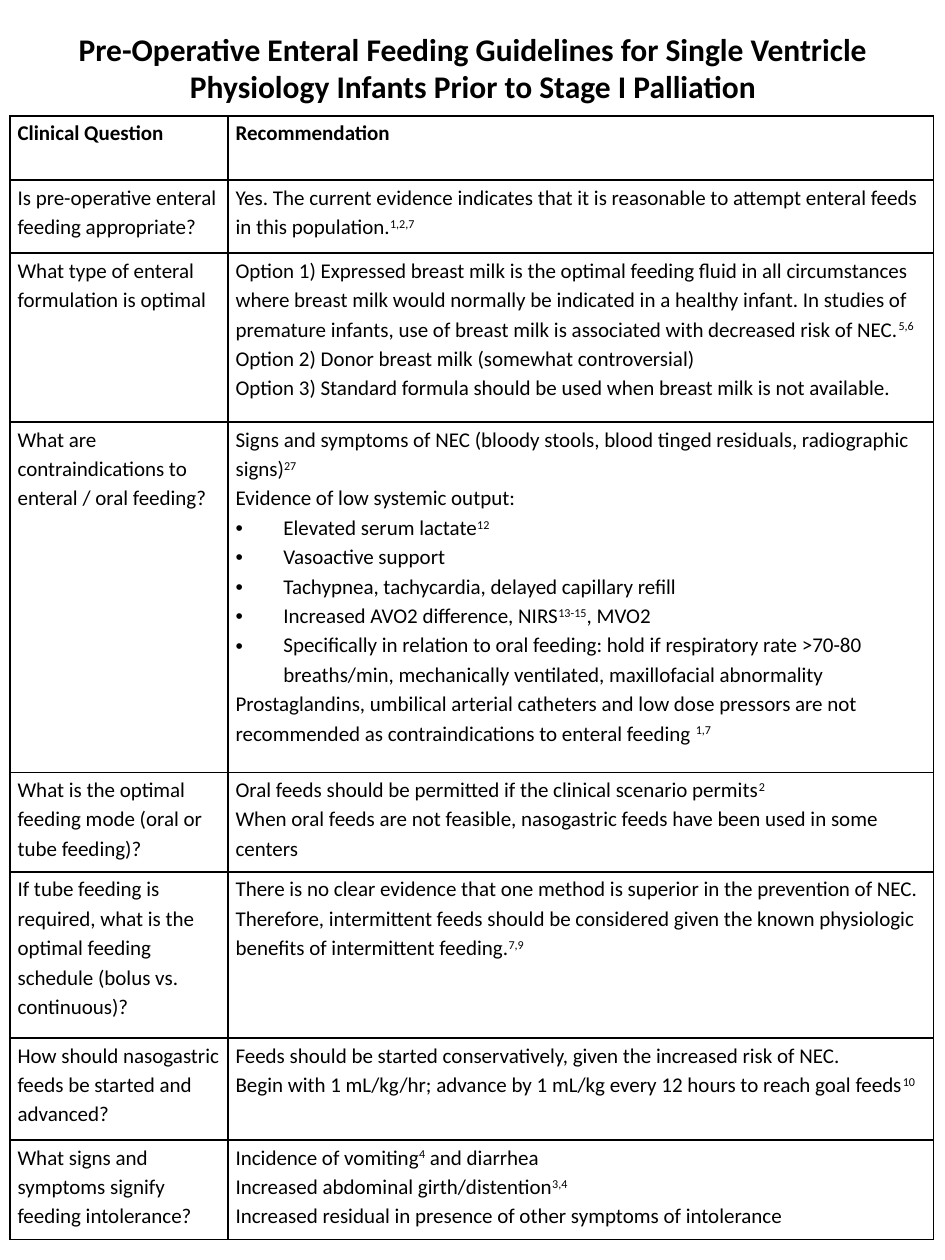
from dataclasses import dataclass

from lxml.etree import SubElement
from pptx import Presentation
from pptx.dml.color import RGBColor
from pptx.enum.text import MSO_ANCHOR, MSO_AUTO_SIZE, PP_ALIGN
from pptx.oxml.ns import qn
from pptx.util import Inches, Pt


@dataclass(frozen=True)
class Theme:
    font: str = "Calibri"
    ink: str = "000000"
    head: int = 18
    body: int = 12
    rule: int = 1


THEME = Theme()
TITLE = ("Pre-Operative Enteral Feeding Guidelines for Single Ventricle "
         "Physiology Infants Prior to Stage I Palliation")
COLS = [1.73, 5.6]

# Row height, question, answer lines; ^marks^ are superscript, "• " starts a bullet
ROWS = [
    (0.51, "Clinical Question", ["Recommendation"]),
    (0.58, "Is pre-operative enteral feeding appropriate?", [
        "Yes. The current evidence indicates that it is reasonable to attempt "
        "enteral feeds in this population.^1,2,7^"]),
    (1.34, "What type of enteral formulation is optimal", [
        "Option 1) Expressed breast milk is the optimal feeding fluid in all "
        "circumstances where breast milk would normally be indicated in a "
        "healthy infant. In studies of premature infants, use of breast milk "
        "is associated with decreased risk of NEC.^5,6^",
        "Option 2) Donor breast milk (somewhat controversial)",
        "Option 3) Standard formula should be used when breast milk is not "
        "available."]),
    (2.78, "What are contraindications to enteral / oral feeding?", [
        "Signs and symptoms of NEC (bloody stools, blood tinged residuals, "
        "radiographic signs)^27^",
        "Evidence of low systemic output:",
        "• Elevated serum lactate^12^",
        "• Vasoactive support",
        "• Tachypnea, tachycardia, delayed capillary refill",
        "• Increased AVO2 difference, NIRS^13-15^, MVO2",
        "• Specifically in relation to oral feeding: hold if respiratory rate "
        ">70-80 breaths/min, mechanically ventilated, maxillofacial abnormality",
        "Prostaglandins, umbilical arterial catheters and low dose pressors "
        "are not recommended as contraindications to enteral feeding ^1,7^"]),
    (0.79, "What is the optimal feeding mode (oral or tube feeding)?", [
        "Oral feeds should be permitted if the clinical scenario permits^2^",
        "When oral feeds are not feasible, nasogastric feeds have been used "
        "in some centers"]),
    (1.32, "If tube feeding is required, what is the optimal feeding schedule "
           "(bolus vs. continuous)?", [
        "There is no clear evidence that one method is superior in the "
        "prevention of NEC. Therefore, intermittent feeds should be considered "
        "given the known physiologic benefits of intermittent feeding.^7,9^"]),
    (0.81, "How should nasogastric feeds be started and advanced?", [
        "Feeds should be started conservatively, given the increased risk of NEC.",
        "Begin with 1 mL/kg/hr; advance by 1 mL/kg every 12 hours to reach "
        "goal feeds^10^"]),
    (0.79, "What signs and symptoms signify feeding intolerance?", [
        "Incidence of vomiting^4^ and diarrhea",
        "Increased abdominal girth/distention^3,4^",
        "Increased residual in presence of other symptoms of intolerance"]),
]


def add_bullet(para):
    props = para._p.get_or_add_pPr()
    props.set("marL", str(Inches(0.38)))
    props.set("indent", str(Inches(-0.38)))
    SubElement(props, qn("a:buFont")).set("typeface", "Arial")
    SubElement(props, qn("a:buChar")).set("char", "•")


def write(frame, lines, size=THEME.body, bold=False, align=PP_ALIGN.LEFT,
          space=1.15):
    """Fill a text frame, one paragraph for each line."""
    for i, line in enumerate(lines):
        para = frame.add_paragraph() if i else frame.paragraphs[0]
        para.alignment = align
        para.line_spacing = space
        if line.startswith("• "):
            add_bullet(para)
            line = line[2:]
        for j, part in enumerate(line.split("^")):
            if not part:
                continue
            run = para.add_run()
            run.text = part
            run.font.name = THEME.font
            run.font.size = Pt(size)
            run.font.bold = bold
            run.font.color.rgb = RGBColor.from_string(THEME.ink)
            if j % 2:
                run._r.get_or_add_rPr().set("baseline", "30000")


def add_rules(cell):
    props = cell._tc.get_or_add_tcPr()
    for side in ("lnL", "lnR", "lnT", "lnB"):
        line = SubElement(props, qn(f"a:{side}"), w=str(Pt(THEME.rule)))
        fill = SubElement(line, qn("a:solidFill"))
        SubElement(fill, qn("a:srgbClr")).set("val", THEME.ink)


def add_title(slide, left, top, width, height):
    title = slide.shapes.title
    title.left, title.top = Inches(left), Inches(top)
    title.width, title.height = Inches(width), Inches(height)
    frame = title.text_frame
    frame.word_wrap = True
    frame.auto_size = MSO_AUTO_SIZE.NONE
    frame.vertical_anchor = MSO_ANCHOR.MIDDLE
    # A deep bottom margin lifts the text clear of the table
    frame.margin_bottom = Inches(0.63)
    write(frame, [TITLE], size=THEME.head, bold=True,
          align=PP_ALIGN.CENTER, space=1.0)


def add_guide(slide, left, top, width, height):
    table = slide.shapes.add_table(
        len(ROWS), len(COLS), Inches(left), Inches(top),
        Inches(width), Inches(height)).table
    table.first_row = table.horz_banding = False
    for col, size in zip(table.columns, COLS):
        col.width = Inches(size)
    for r, (tall, ask, reply) in enumerate(ROWS):
        table.rows[r].height = Inches(tall)
        for c, lines in enumerate(([ask], reply)):
            cell = table.cell(r, c)
            cell.margin_left = cell.margin_right = Inches(0.06)
            cell.margin_top, cell.margin_bottom = Inches(0.01), 0
            add_rules(cell)
            cell.fill.background()
            write(cell.text_frame, lines, bold=r == 0)


def main():
    deck = Presentation()
    deck.slide_width, deck.slide_height = Inches(7.5), Inches(10)
    slide = deck.slides.add_slide(deck.slide_layouts.get_by_name("Title Only"))
    add_title(slide, 0.38, 0.4, 6.75, 0.85)
    add_guide(slide, 0.08, 0.92, sum(COLS), sum(row[0] for row in ROWS))
    deck.save("out.pptx")


if __name__ == "__main__":
    main()
